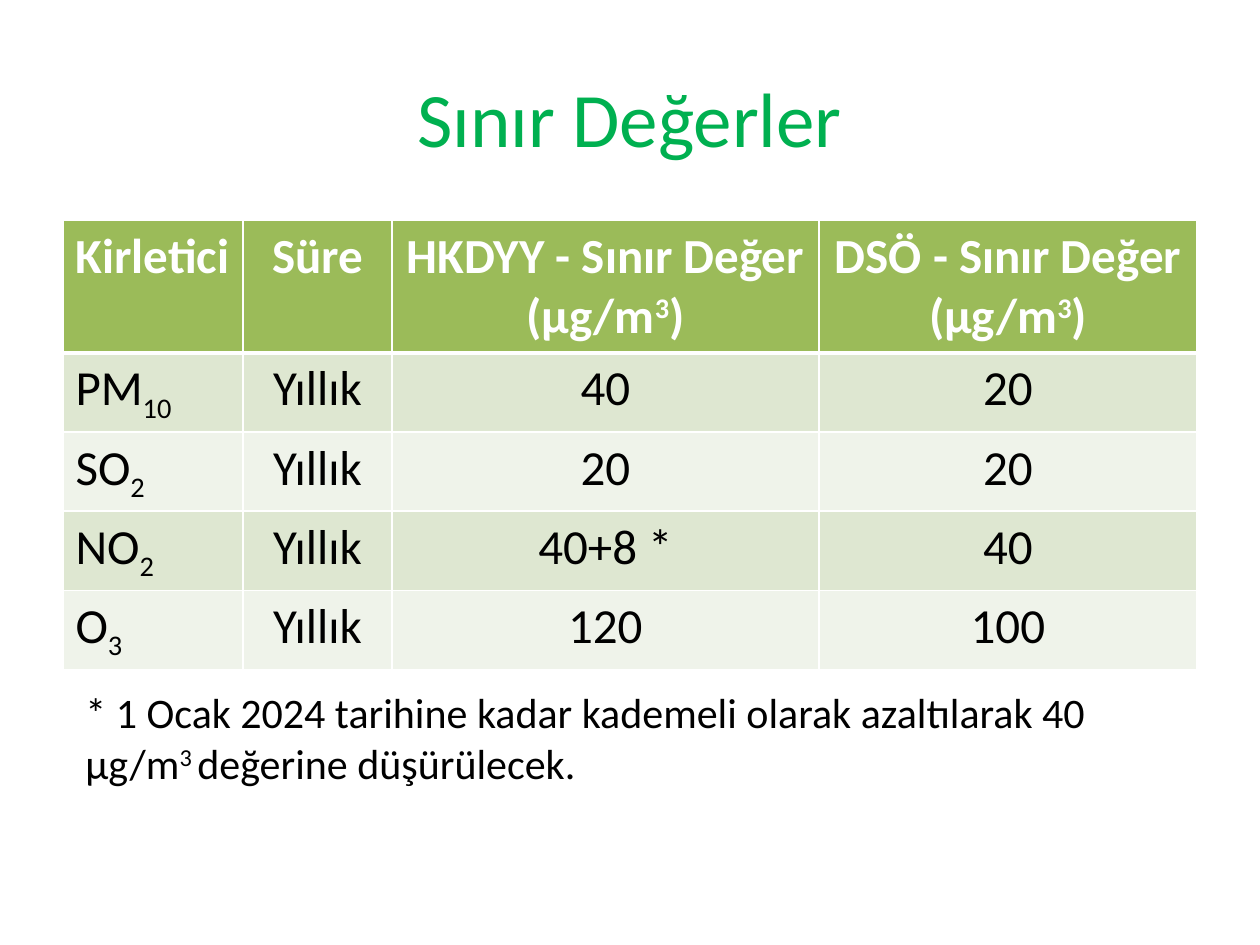
from lxml import etree
from pptx import Presentation
from pptx.dml.color import RGBColor
from pptx.enum.text import MSO_ANCHOR, PP_ALIGN
from pptx.oxml.ns import qn
from pptx.util import Inches, Pt

LEFT, CENTER = PP_ALIGN.LEFT, PP_ALIGN.CENTER
MIDDLE = MSO_ANCHOR.MIDDLE
FONT = "Calibri"
SUPER, SUB = 30, -25  # baseline shift in percent

COLORS = {
    "title": "00B050",
    "header": "9BBB59",
    "band_dark": "DEE7D1",
    "band_light": "EFF3EA",
    "white": "FFFFFF",
    "text": "000000",
}

COLUMN_WIDTHS = [1.43, 1.18, 3.39, 3]
ROW_HEIGHT = 0.41


def unit_header(label):
    return [(label + " - Sınır Değer (μg/m", 0), ("3", SUPER), (")", 0)]


def pollutant(symbol, index):
    return [(symbol, 0), (index, SUB)]


LIMITS = [
    ["Kirletici", "Süre", unit_header("HKDYY"), unit_header("DSÖ")],
    [pollutant("PM", "10"), "Yıllık", "40", "20"],
    [pollutant("SO", "2"), "Yıllık", "20", "20"],
    [pollutant("NO", "2"), "Yıllık", "40+8 *", "40"],
    [pollutant("O", "3"), "Yıllık", "120", "100"],
]
FOOTNOTE = [
    ("* 1 Ocak 2024 tarihine kadar kademeli olarak azaltılarak 40 μg/m", 0),
    ("3 ", SUPER),
    ("değerine düşürülecek.", 0),
]


def write_text(frame, content, size, color="text", bold=False, align=LEFT):
    """Write a string, or a list of (text, baseline) runs, as one paragraph."""
    paragraph = frame.paragraphs[0]
    paragraph.alignment = align
    runs = [(content, 0)] if isinstance(content, str) else content
    for text, baseline in runs:
        run = paragraph.add_run()
        run.text = text
        run.font.name = FONT
        run.font.size = Pt(size)
        run.font.bold = bold
        run.font.color.rgb = RGBColor.from_string(COLORS[color])
        if baseline:
            run.font._element.set("baseline", str(baseline * 1000))


def set_borders(cell, top=1, bottom=1):
    properties = cell._tc.get_or_add_tcPr()
    for side, width in (("L", 1), ("R", 1), ("T", top), ("B", bottom)):
        line = etree.SubElement(properties, qn("a:ln" + side), w=str(Pt(width)))
        fill = etree.SubElement(line, qn("a:solidFill"))
        etree.SubElement(fill, qn("a:srgbClr"), val=COLORS["white"])


def add_title(slide, text):
    title = slide.shapes.title
    title.left, title.top = Inches(0.5), Inches(0.3)
    title.width, title.height = Inches(9), Inches(1.25)
    title.text_frame.vertical_anchor = MIDDLE
    write_text(title.text_frame, text, size=44, color="title", align=CENTER)


def add_limits_table(slide, rows):
    table = slide.shapes.add_table(
        len(rows), len(COLUMN_WIDTHS), Inches(0.5), Inches(1.75),
        Inches(sum(COLUMN_WIDTHS)), Inches(ROW_HEIGHT * len(rows))).table
    for column, width in zip(table.columns, COLUMN_WIDTHS):
        column.width = Inches(width)
    for r, row in enumerate(rows):
        table.rows[r].height = Inches(ROW_HEIGHT)
        is_header = r == 0
        band = "header" if is_header else "band_dark" if r % 2 else "band_light"
        for c, content in enumerate(row):
            cell = table.cell(r, c)
            # A thick rule separates the header from the body
            set_borders(cell, top=3 if r == 1 else 1, bottom=3 if is_header else 1)
            cell.fill.solid()
            cell.fill.fore_color.rgb = RGBColor.from_string(COLORS[band])
            write_text(cell.text_frame, content, size=28, bold=is_header,
                       color="white" if is_header else "text",
                       align=CENTER if c else LEFT)


def add_footnote(slide, content):
    footnote = slide.shapes.add_textbox(
        Inches(0.58), Inches(5.4), Inches(8.83), Inches(0.91))
    footnote.text_frame.word_wrap = True
    write_text(footnote.text_frame, content, size=24)


def main():
    prs = Presentation()
    prs.slide_width, prs.slide_height = Inches(10), Inches(7.5)
    slide = prs.slides.add_slide(prs.slide_layouts[5])  # title only

    add_title(slide, "Sınır Değerler")
    add_limits_table(slide, LIMITS)
    add_footnote(slide, FOOTNOTE)

    prs.save("out.pptx")


if __name__ == "__main__":
    main()
